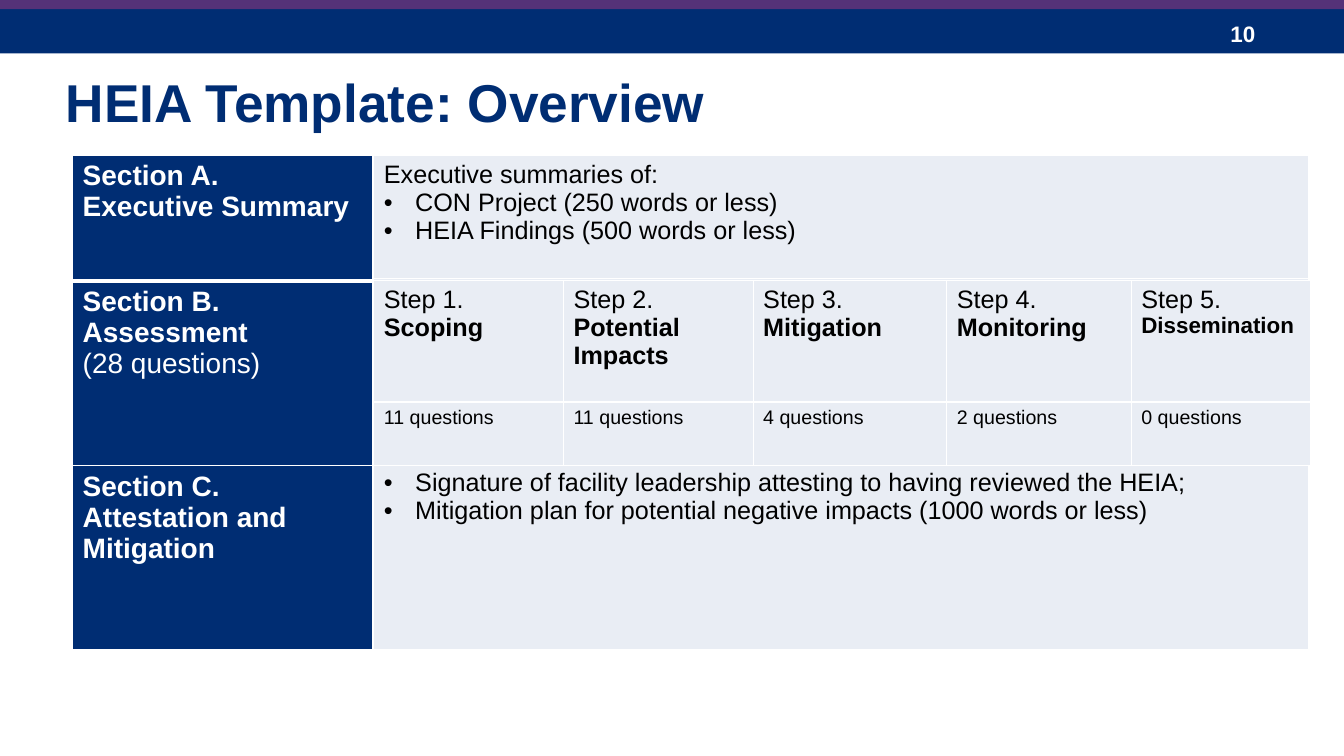
from dataclasses import dataclass, field

from lxml.etree import SubElement
from pptx import Presentation
from pptx.dml.color import RGBColor
from pptx.enum.shapes import MSO_SHAPE as Shape
from pptx.enum.text import MSO_ANCHOR as Anchor, PP_ALIGN as Align
from pptx.oxml.ns import qn
from pptx.util import Cm, Pt

NAVY = RGBColor(0x00, 0x2D, 0x73)
PURPLE = RGBColor(0x55, 0x32, 0x78)
PALE = RGBColor(0xE9, 0xED, 0xF4)
WHITE = RGBColor(0xFF, 0xFF, 0xFF)
BLACK = RGBColor(0x00, 0x00, 0x00)
FONT = "Arial"
INDENT = Cm(0.79)


@dataclass
class Line:
    text: str
    size: int = 18
    bold: bool = False
    bullet: bool = False


@dataclass
class Cell:
    lines: list[Line] = field(default_factory=list)
    top: float = 0.13
    bottom_border: float = 1


@dataclass
class Grid:
    left: float
    top: float
    widths: list[float]
    heights: list[float]
    rows: list[list[Cell]]
    fill: RGBColor
    color: RGBColor


def write(p, text: str, *, size: int = 18, bold: bool = False,
          color: RGBColor = BLACK, bullet: bool = False) -> None:
    """Put formatted text into a paragraph."""
    if bullet:
        pPr = p._p.get_or_add_pPr()
        pPr.set("marL", str(INDENT))
        pPr.set("indent", str(-INDENT))
        SubElement(pPr, qn("a:buFont"), typeface=FONT)
        SubElement(pPr, qn("a:buChar"), char="•")
    r = p.add_run()
    r.text = text
    r.font.name, r.font.size, r.font.bold = FONT, Pt(size), bold
    r.font.color.rgb = color


def add_borders(cell, bottom: float) -> None:
    tcPr = cell._tc.get_or_add_tcPr()
    for i, side in enumerate("LRTB"):
        width = bottom if side == "B" else 1
        ln = SubElement(tcPr, qn(f"a:ln{side}"), w=str(Pt(width)))
        fill = SubElement(ln, qn("a:solidFill"))
        SubElement(fill, qn("a:srgbClr"), val=str(WHITE))
        tcPr.insert(i, ln)


def add_grid(s, grid: Grid) -> None:
    frame = s.shapes.add_table(len(grid.heights), len(grid.widths), Cm(grid.left), Cm(grid.top),
                               Cm(sum(grid.widths)), Cm(sum(grid.heights)))
    table = frame.table
    table.first_row = table.horz_banding = False
    for col, width in zip(table.columns, grid.widths):
        col.width = Cm(width)
    for row, height, contents in zip(table.rows, grid.heights, grid.rows):
        row.height = Cm(height)
        for cell, content in zip(row.cells, contents):
            cell.fill.solid()
            cell.fill.fore_color.rgb = grid.fill
            cell.margin_top = Cm(content.top)
            add_borders(cell, content.bottom_border)
            tf = cell.text_frame
            for i, line in enumerate(content.lines):
                p = tf.add_paragraph() if i else tf.paragraphs[0]
                write(p, line.text, size=line.size, bold=line.bold,
                      color=grid.color, bullet=line.bullet)


def add_band(s, top: float, height: float, color: RGBColor) -> None:
    sp = s.shapes.add_shape(Shape.RECTANGLE, 0, Cm(top), prs.slide_width, Cm(height))
    sp.shadow.inherit = False
    sp.fill.solid()
    sp.fill.fore_color.rgb = color
    sp.line.fill.background()


def heading(*texts: str) -> list[Line]:
    return [Line(text, 20, True) for text in texts]


def bullets(*texts: str) -> list[Line]:
    return [Line(text, bullet=True) for text in texts]


SECTIONS = Grid(1.83, 3.91, [7.57], [3.17, 4.65, 4.65], [
    [Cell(heading("Section A.", "Executive Summary"), bottom_border=3)],
    [Cell(heading("Section B.", "Assessment") + [Line("(28 questions)", 20)])],
    [Cell(heading("Section C.", "Attestation and", "Mitigation"))],
], NAVY, WHITE)

DETAILS = Grid(9.42, 3.91, [23.57], [3.1, 3.1, 6.25], [
    [Cell([Line("Executive summaries of:")]
          + bullets("CON Project (250 words or less)", "HEIA Findings (500 words or less)"))],
    [Cell()],
    [Cell(bullets("Signature of facility leadership attesting to having reviewed the HEIA;",
                  "Mitigation plan for potential negative impacts (1000 words or less)"),
          top=1.69)],
], PALE, BLACK)

# Step name, name size, number of questions
STEPS = [("Scoping", 18, 11), ("Potential Impacts", 18, 11), ("Mitigation", 18, 4),
         ("Monitoring", 18, 2), ("Dissemination", 16, 0)]

ASSESSMENT = Grid(9.42, 7.06, [4.78, 4.78, 4.88, 4.65, 4.52], [3.07, 1.6], [
    [Cell([Line(f"Step {n}."), Line(name, size, True)])
     for n, (name, size, _) in enumerate(STEPS, 1)],
    [Cell([Line(f"{count} questions", 14)]) for *_, count in STEPS],
], PALE, BLACK)

prs = Presentation()
prs.slide_width, prs.slide_height = Cm(33.87), Cm(19.05)
s = prs.slides.add_slide(prs.slide_layouts[5])

# Header bands and page number
add_band(s, 0.23, 1.12, NAVY)
number = s.shapes.add_textbox(Cm(30.76), Cm(0.33), Cm(2.54), Cm(1.02))
tf = number.text_frame
tf.word_wrap = True
tf.vertical_anchor = Anchor.MIDDLE
write(tf.paragraphs[0], "10", size=16, bold=True, color=WHITE)
add_band(s, -0.08, 0.31, PURPLE)

# Tables
for grid in (SECTIONS, DETAILS, ASSESSMENT):
    add_grid(s, grid)

# Title
title = s.shapes.title
title.left, title.top, title.width, title.height = Cm(1.4), Cm(1.6), Cm(31.62), Cm(1.88)
tf = title.text_frame
tf.vertical_anchor = Anchor.MIDDLE
p = tf.paragraphs[0]
p.alignment = Align.LEFT
write(p, "HEIA Template: Overview", size=38, bold=True, color=NAVY)

prs.save("out.pptx")
